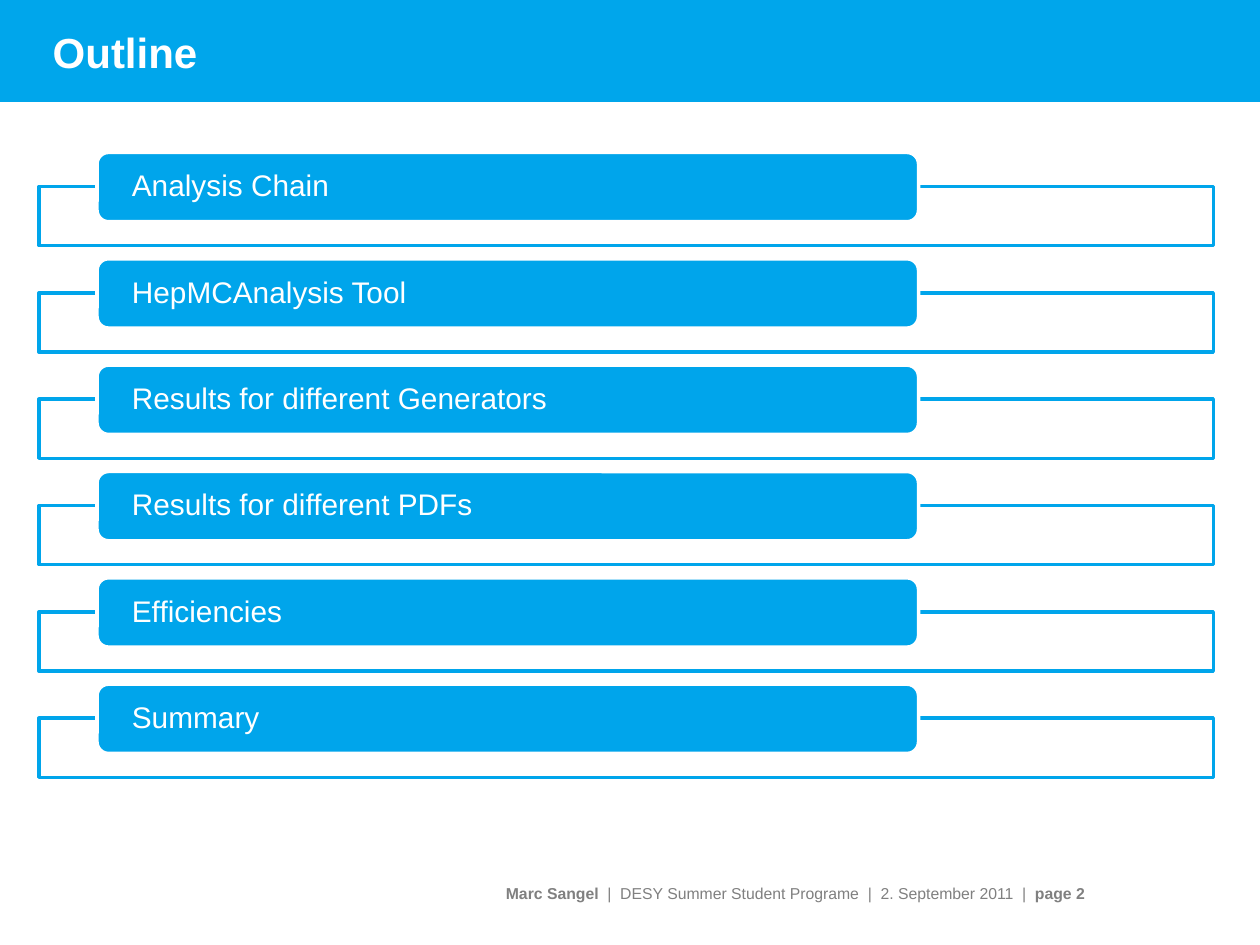
from lxml.etree import SubElement
from pptx import Presentation
from pptx.dml.color import RGBColor
from pptx.enum.shapes import MSO_SHAPE as Shape
from pptx.enum.text import MSO_ANCHOR as Anchor, PP_ALIGN as Align
from pptx.oxml.ns import qn
from pptx.util import Inches, Pt

BANNER_BLUE = RGBColor(0x00, 0xA6, 0xEB)
BLUE = RGBColor(0x00, 0xA5, 0xEB)
WHITE = RGBColor(0xFF, 0xFF, 0xFF)
GRAY = RGBColor(0x80, 0x80, 0x80)

TOPICS = [
    "Analysis Chain",
    "HepMCAnalysis Tool",
    "Results for different Generators",
    "Results for different PDFs",
    "Efficiencies",
    "Summary",
]
FIRST_TOP, LAST_TOP = 1.21, 5.43
PITCH = (LAST_TOP - FIRST_TOP) / (len(TOPICS) - 1)


def add_box(kind, left, top, width, height, fill, line=None):
    shape = slide.shapes.add_shape(
        kind, Inches(left), Inches(top), Inches(width), Inches(height))
    shape.shadow.inherit = False
    shape.fill.solid()
    shape.fill.fore_color.rgb = fill
    if line is None:
        shape.line.fill.background()
    else:
        shape.line.color.rgb = line
        shape.line.width = Pt(2)
    return shape


def style_run(run, size, color, bold=False):
    run.font.name = "Arial"
    run.font.size = Pt(size)
    run.font.color.rgb = color
    run.font.bold = bold


presentation = Presentation()
presentation.slide_width = Inches(10)
presentation.slide_height = Inches(7.5)
slide = presentation.slides.add_slide(presentation.slide_layouts[6])

add_box(Shape.RECTANGLE, 0, 0, 10, 0.81, BANNER_BLUE)

footer = slide.shapes.add_textbox(Inches(0.31), Inches(6.87), Inches(8.3), Inches(0.44))
text_frame = footer.text_frame
text_frame.word_wrap = True
text_frame.vertical_anchor = Anchor.MIDDLE
text_frame.margin_right = 0
paragraph = text_frame.paragraphs[0]
paragraph.alignment = Align.RIGHT
for text, bold in [
    ("Marc Sangel  ", True),
    ("|  DESY Summer Student Programe  |  2. September 2011  |  ", False),
    ("page 2", True),
]:
    run = paragraph.add_run()
    run.text = text
    style_run(run, 9, GRAY, bold)

title = slide.shapes.add_textbox(Inches(0.32), Inches(0.11), Inches(9.32), Inches(0.6))
text_frame = title.text_frame
text_frame.word_wrap = True
text_frame.vertical_anchor = Anchor.MIDDLE
text_frame.text = "Outline"
style_run(text_frame.paragraphs[0].runs[0], 24, WHITE, True)

for index, topic in enumerate(TOPICS):
    top = FIRST_TOP + index * PITCH
    frame = add_box(Shape.RECTANGLE, 0.31, top + 0.27, 9.32, 0.47, WHITE, BLUE)
    color = frame.fill._xPr.find(qn("a:solidFill"))[0]
    SubElement(color, qn("a:alpha"), val="90000")

    label = add_box(Shape.ROUNDED_RECTANGLE, 0.77, top, 6.52, 0.55, BLUE, WHITE)
    text_frame = label.text_frame
    text_frame.word_wrap = True
    text_frame.vertical_anchor = Anchor.MIDDLE
    text_frame.margin_left = text_frame.margin_right = Inches(0.25)
    text_frame.margin_top = text_frame.margin_bottom = 0
    text_frame.text = topic
    paragraph = text_frame.paragraphs[0]
    paragraph.alignment = Align.LEFT
    paragraph.line_spacing = 0.9
    style_run(paragraph.runs[0], 17, WHITE)

presentation.save("out.pptx")
